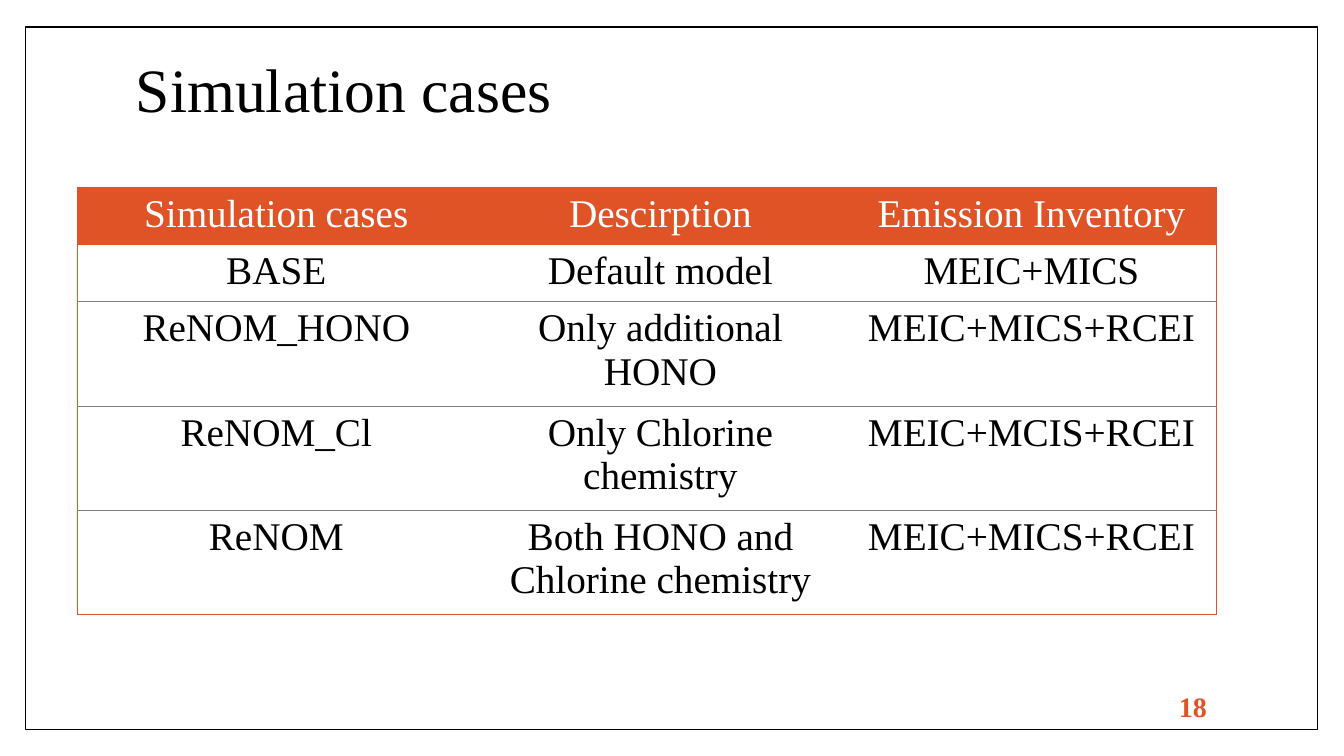
from dataclasses import dataclass

import pptx
import pptx.dml.color
import pptx.enum.shapes
import pptx.enum.text
import pptx.oxml
import pptx.oxml.ns
import pptx.util
from pptx.util import Inches

Align = pptx.enum.text.PP_ALIGN
Anchor = pptx.enum.text.MSO_ANCHOR


@dataclass(frozen=True)
class Theme:
    font: str = "Times New Roman"
    accent: str = "DF5327"
    black: str = "000000"
    white: str = "FFFFFF"
    rule: str = "7F7F7F"
    title_size: int = 44
    table_size: int = 28
    number_size: int = 20
    frame_width: float = 1
    border_width: float = 0.79


@dataclass(frozen=True)
class Label:
    text: str
    left: float
    top: float
    width: float
    height: float
    size: int
    color: str
    align: Align
    bold: bool = False
    line_spacing: float = 1.0


@dataclass(frozen=True)
class Case:
    name: str
    description: str
    inventory: str
    height: float


THEME = Theme()

LABELS = [
    Label("Simulation cases", 1.25, 0.42, 10.8, 0.99, THEME.title_size,
          THEME.black, Align.LEFT, line_spacing=0.9),
    Label("18", 10.2, 6.81, 1.87, 0.4, THEME.number_size,
          THEME.accent, Align.RIGHT, bold=True),
]

CASES = [
    Case("Simulation cases", "Descirption", "Emission Inventory", 0.56),
    Case("BASE", "Default model", "MEIC+MICS", 0.56),
    Case("ReNOM_HONO", "Only additional HONO", "MEIC+MICS+RCEI", 1.02),
    Case("ReNOM_Cl", "Only Chlorine chemistry", "MEIC+MCIS+RCEI", 1.02),
    Case("ReNOM", "Both HONO and Chlorine chemistry", "MEIC+MICS+RCEI", 1.02),
]
COLUMN_WIDTHS = [3.94, 3.68, 3.68]


def rgb(color: str) -> pptx.dml.color.RGBColor:
    return pptx.dml.color.RGBColor.from_string(color)


def add_span(para, text: str, size: int, color: str, bold: bool = False) -> None:
    span = para.add_run()
    span.text = text
    span.font.name = THEME.font
    span.font.size = pptx.util.Pt(size)
    span.font.bold = bold
    span.font.color.rgb = rgb(color)


def add_frame(page) -> None:
    frame = page.shapes.add_shape(
        pptx.enum.shapes.MSO_SHAPE.RECTANGLE,
        Inches(0.25), Inches(0.27), Inches(12.82), Inches(6.97))
    frame.shadow.inherit = False
    frame.fill.solid()
    frame.fill.fore_color.rgb = rgb(THEME.white)
    frame.line.color.rgb = rgb(THEME.black)
    frame.line.width = pptx.util.Pt(THEME.frame_width)


def add_label(page, label: Label) -> None:
    box = page.shapes.add_textbox(Inches(label.left), Inches(label.top),
                                  Inches(label.width), Inches(label.height))
    box.text_frame.word_wrap = True
    box.text_frame.vertical_anchor = Anchor.MIDDLE
    para = box.text_frame.paragraphs[0]
    para.alignment = label.align
    para.line_spacing = label.line_spacing
    add_span(para, label.text, label.size, label.color, label.bold)


def set_borders(cell, colors: dict[str, str | None]) -> None:
    properties = cell._tc.get_or_add_tcPr()
    width = int(pptx.util.Pt(THEME.border_width))
    for index, (side, color) in enumerate(colors.items()):
        paint = (f'<a:solidFill><a:srgbClr val="{color}"/></a:solidFill>'
                 if color else "<a:noFill/>")
        properties.insert(index, pptx.oxml.parse_xml(
            f'<a:ln{side} {pptx.oxml.ns.nsdecls("a")} w="{width}">{paint}</a:ln{side}>'))


def add_case_table(page) -> None:
    table = page.shapes.add_table(
        len(CASES), len(COLUMN_WIDTHS), Inches(0.77), Inches(1.86),
        Inches(sum(COLUMN_WIDTHS)), Inches(sum(case.height for case in CASES))).table
    table.horz_banding = False
    for column, width in zip(table.columns, COLUMN_WIDTHS):
        column.width = Inches(width)
    last_row, last_column = len(CASES) - 1, len(COLUMN_WIDTHS) - 1
    for row, case in enumerate(CASES):
        table.rows[row].height = Inches(case.height)
        header = row == 0
        for column, text in enumerate((case.name, case.description, case.inventory)):
            cell = table.cell(row, column)
            if header:
                cell.fill.solid()
                cell.fill.fore_color.rgb = rgb(THEME.accent)
            else:
                cell.fill.background()
            para = cell.text_frame.paragraphs[0]
            para.alignment = Align.CENTER
            add_span(para, text, THEME.table_size,
                     THEME.white if header else THEME.black)
            set_borders(cell, {
                "L": THEME.accent if column == 0 else None,
                "R": THEME.accent if column == last_column else None,
                "T": THEME.accent if row <= 1 else THEME.rule,
                "B": THEME.accent if row in (0, last_row) else THEME.rule,
            })


def main() -> None:
    deck = pptx.Presentation()
    deck.slide_width = Inches(13.33)
    deck.slide_height = Inches(7.5)
    page = deck.slides.add_slide(deck.slide_layouts[6])
    add_frame(page)
    for label in LABELS:
        add_label(page, label)
    add_case_table(page)
    deck.save("out.pptx")


if __name__ == "__main__":
    main()
